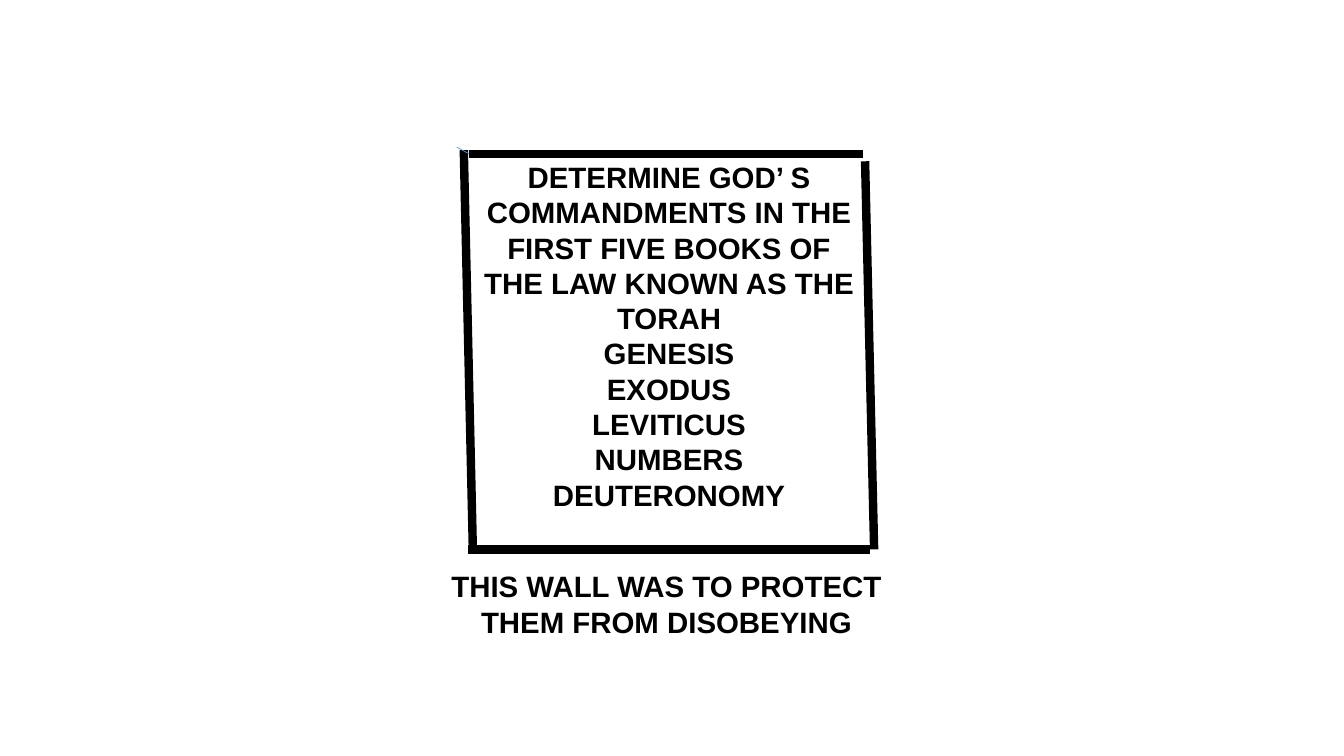
"""Build the slide showing the wall around the five books of the law."""
import pptx
import pptx.dml.color
import pptx.enum.shapes
import pptx.enum.text
import pptx.oxml.ns
import pptx.util
import lxml.etree

Inches = pptx.util.Inches
COLORS = {"ink": "000000", "accent": "5B9BD5"}
TEXTS = [
    ((4.69, 1.53, 3.89, 3.64), [
        "DETERMINE GOD’ S COMMANDMENTS IN THE FIRST FIVE BOOKS OF THE LAW KNOWN AS THE TORAH",
        "GENESIS", "EXODUS", "LEVITICUS", "NUMBERS", "DEUTERONOMY"]),
    ((4.07, 5.59, 5.08, 0.81), ["THIS WALL WAS TO PROTECT THEM FROM DISOBEYING"]),
]
WALLS = [
    ((4.6, 1.49, 4.69, 5.45), "ink", 6),
    ((8.58, 1.6, 8.67, 5.45), "ink", 6),
    ((4.64, 5.45, 8.63, 5.45), "ink", 6),
    ((4.66, 1.53, 4.53, 1.46), "accent", 0.5),
    ((4.65, 1.53, 8.56, 1.53), "ink", 6),
]
FONT = {"name": "Arial", "size": pptx.util.Pt(21), "bold": True}
FRAME = {"word_wrap": True, "auto_size": pptx.enum.text.MSO_AUTO_SIZE.SHAPE_TO_FIT_TEXT}


def color(name):
    return pptx.dml.color.RGBColor.from_string(COLORS[name])


def add_text(page, place, lines):
    box = page.shapes.add_textbox(*map(Inches, place))
    frame = box.text_frame
    for key, value in FRAME.items():
        setattr(frame, key, value)
    for index, line in enumerate(lines):
        para = frame.add_paragraph() if index else frame.paragraphs[0]
        para.alignment = pptx.enum.text.PP_ALIGN.CENTER
        span = para.add_run()
        span.text = line
        for key, value in FONT.items():
            setattr(span.font, key, value)
        span.font.color.rgb = color("ink")


def add_wall(page, ends, shade, width):
    wall = page.shapes.add_connector(
        pptx.enum.shapes.MSO_CONNECTOR.STRAIGHT, *map(Inches, ends))
    wall.line.color.rgb = color(shade)
    wall.line.width = pptx.util.Pt(width)
    properties = wall.element.find(pptx.oxml.ns.qn("p:spPr"))
    lxml.etree.SubElement(properties, pptx.oxml.ns.qn("a:effectLst"))


def main():
    deck = pptx.Presentation()
    deck.slide_width, deck.slide_height = Inches(13.33), Inches(7.5)
    page = deck.slides.add_slide(deck.slide_layouts[6])
    (law_place, law_lines), (caption_place, caption_lines) = TEXTS
    add_text(page, law_place, law_lines)
    for ends, shade, width in WALLS:
        add_wall(page, ends, shade, width)
    add_text(page, caption_place, caption_lines)
    deck.save("out.pptx")


if __name__ == "__main__":
    main()
